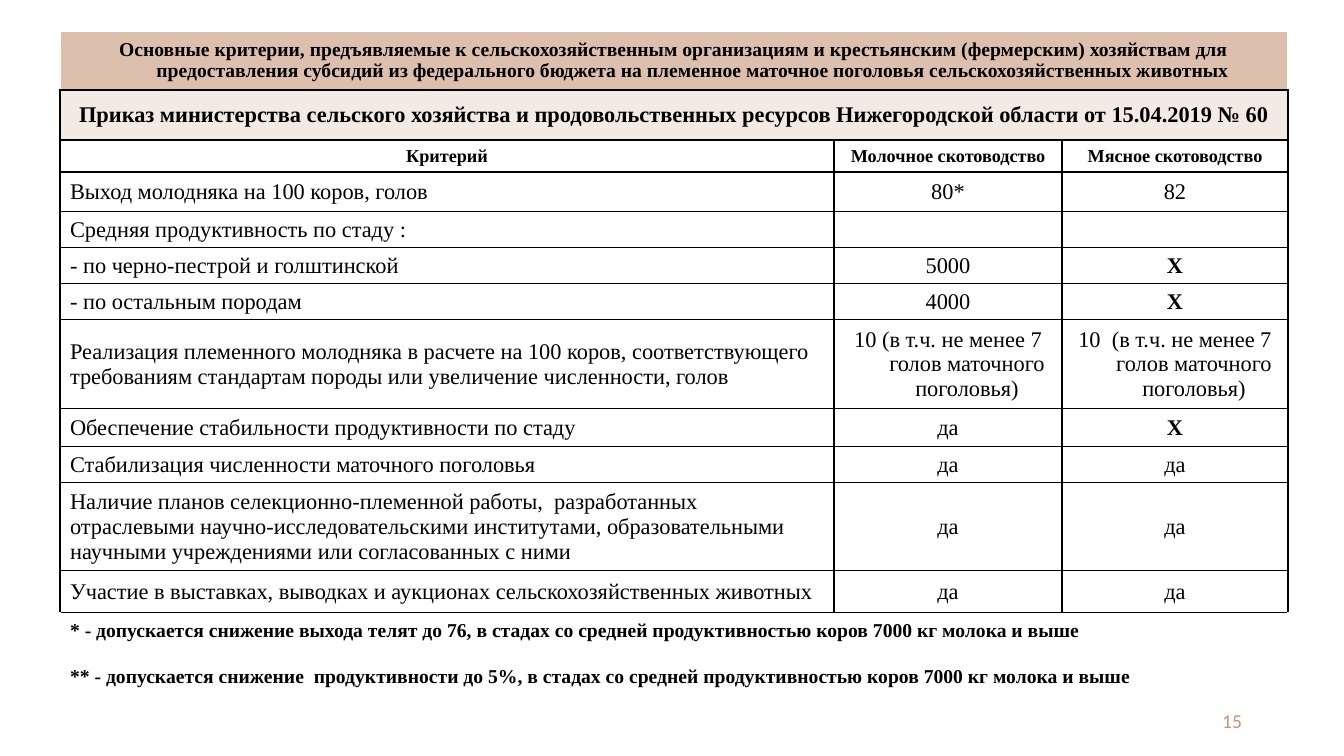
from lxml import etree
from pptx import Presentation
from pptx import util as u
from pptx.dml import color
from pptx.enum import text
from pptx.oxml import ns

PX = 914400 / 100.8
HANG = 38
SERIF = "Times New Roman"
CENTER, LEFT, RIGHT = text.PP_ALIGN.CENTER, text.PP_ALIGN.LEFT, text.PP_ALIGN.RIGHT


def px(length):
    return u.Emu(round(length * PX))


def rgb(value):
    return color.RGBColor.from_string(value)


presentation = Presentation()
presentation.slide_width, presentation.slide_height = px(1344), px(756)
slide = presentation.slides.add_slide(presentation.slide_layouts[6])

# Page number
number_box = slide.shapes.add_textbox(px(950), px(701), px(302), px(40))
number_box.text_frame.word_wrap = True
number_box.text_frame.vertical_anchor = text.MSO_ANCHOR.MIDDLE
paragraph = number_box.text_frame.paragraphs[0]
paragraph.alignment = RIGHT
run = paragraph.add_run()
run.text = "15"
run.font.name, run.font.size = "Calibri", u.Pt(14)
run.font.color.rgb = rgb("C79478")

# Table rows: height, size, cell texts; a single text spans the whole row
rows = [
    (59, 14, ["Основные критерии, предъявляемые к сельскохозяйственным организациям и крестьянским "
              "(фермерским) хозяйствам для предоставления субсидий из федерального бюджета на "
              "племенное маточное поголовья сельскохозяйственных животных"]),
    (50, 16, ["Приказ министерства сельского хозяйства и продовольственных ресурсов "
              "Нижегородской области от 15.04.2019 № 60"]),
    (32, 13, ["Критерий", "Молочное скотоводство", "Мясное скотоводство"]),
    (40, 16, ["Выход молодняка на 100 коров, голов", "80*", "82"]),
    (36, 16, ["Средняя продуктивность по стаду :", "", ""]),
    (36, 16, ["- по черно-пестрой и голштинской", "5000", "Х"]),
    (36, 16, ["- по остальным породам", "4000", "Х"]),
    (89, 16, ["Реализация племенного молодняка в расчете на 100 коров, соответствующего "
              "требованиям стандартам породы или увеличение численности, голов",
              "10 (в т.ч. не менее 7 голов маточного поголовья)",
              "10  (в т.ч. не менее 7 голов маточного поголовья)"]),
    (38, 16, ["Обеспечение стабильности продуктивности по стаду", "да", "Х"]),
    (36, 16, ["Стабилизация численности маточного поголовья", "да", "да"]),
    (88, 16, ["Наличие планов селекционно-племенной работы,  разработанных отраслевыми "
              "научно-исследовательскими институтами, образовательными научными учреждениями "
              "или согласованных с ними", "да", "да"]),
    (42, 16, ["Участие в выставках, выводках и аукционах сельскохозяйственных животных",
              "да", "да"]),
    (37, 14, ["* - допускается снижение выхода телят до 76, в стадах со средней "
              "продуктивностью коров 7000 кг молока и выше"]),
    (55, 14, ["** - допускается снижение  продуктивности до 5%, в стадах со средней "
              "продуктивностью коров 7000 кг молока и выше"]),
]
widths = [774, 228, 226]
fills = {0: "DDBFAE", 1: "F4EAE4"}
borders = {0: ["lnB"], 12: ["lnT"], 13: []}
all_sides = ["lnL", "lnR", "lnT", "lnB"]
heading_rows, first_note = 3, 12

heights = [height for height, size, texts in rows]
frame = slide.shapes.add_table(len(rows), len(widths), px(60), px(31),
                               px(sum(widths)), px(sum(heights)))
table = frame.table
table.first_row = table.horz_banding = False
for column, width in zip(table.columns, widths):
    column.width = px(width)

for i, (height, size, texts) in enumerate(rows):
    table.rows[i].height = px(height)
    if len(texts) == 1:
        table.cell(i, 0).merge(table.cell(i, len(widths) - 1))

    # Borders and fill
    for j in range(len(widths)):
        cell = table.cell(i, j)
        for name, value in {"margin_top": 0, "margin_bottom": 0,
                            "vertical_anchor": text.MSO_ANCHOR.MIDDLE}.items():
            setattr(cell, name, value)
        properties = cell._tc.get_or_add_tcPr()
        for side in borders.get(i, all_sides):
            line = etree.SubElement(properties, ns.qn("a:" + side), w=str(u.Pt(1)))
            solid = etree.SubElement(line, ns.qn("a:solidFill"))
            etree.SubElement(solid, ns.qn("a:srgbClr"), val="000000")
        if i in fills:
            cell.fill.solid()
            cell.fill.fore_color.rgb = rgb(fills[i])
        else:
            cell.fill.background()

    # Wording
    for j, wording in enumerate(texts):
        if not wording:
            continue
        paragraph = table.cell(i, j).text_frame.paragraphs[0]
        centered = i < heading_rows or j > 0
        paragraph.alignment = CENTER if centered else LEFT
        if centered:
            indents = paragraph._p.get_or_add_pPr()
            indents.set("marL", str(px(HANG)))
            indents.set("indent", str(px(-HANG)))
        run = paragraph.add_run()
        run.text = wording
        bold = i < heading_rows or i >= first_note or wording == "Х"
        for name, value in {"name": SERIF, "size": u.Pt(size), "bold": bold}.items():
            setattr(run.font, name, value)
        run.font.color.rgb = rgb("000000")

presentation.save("out.pptx")
